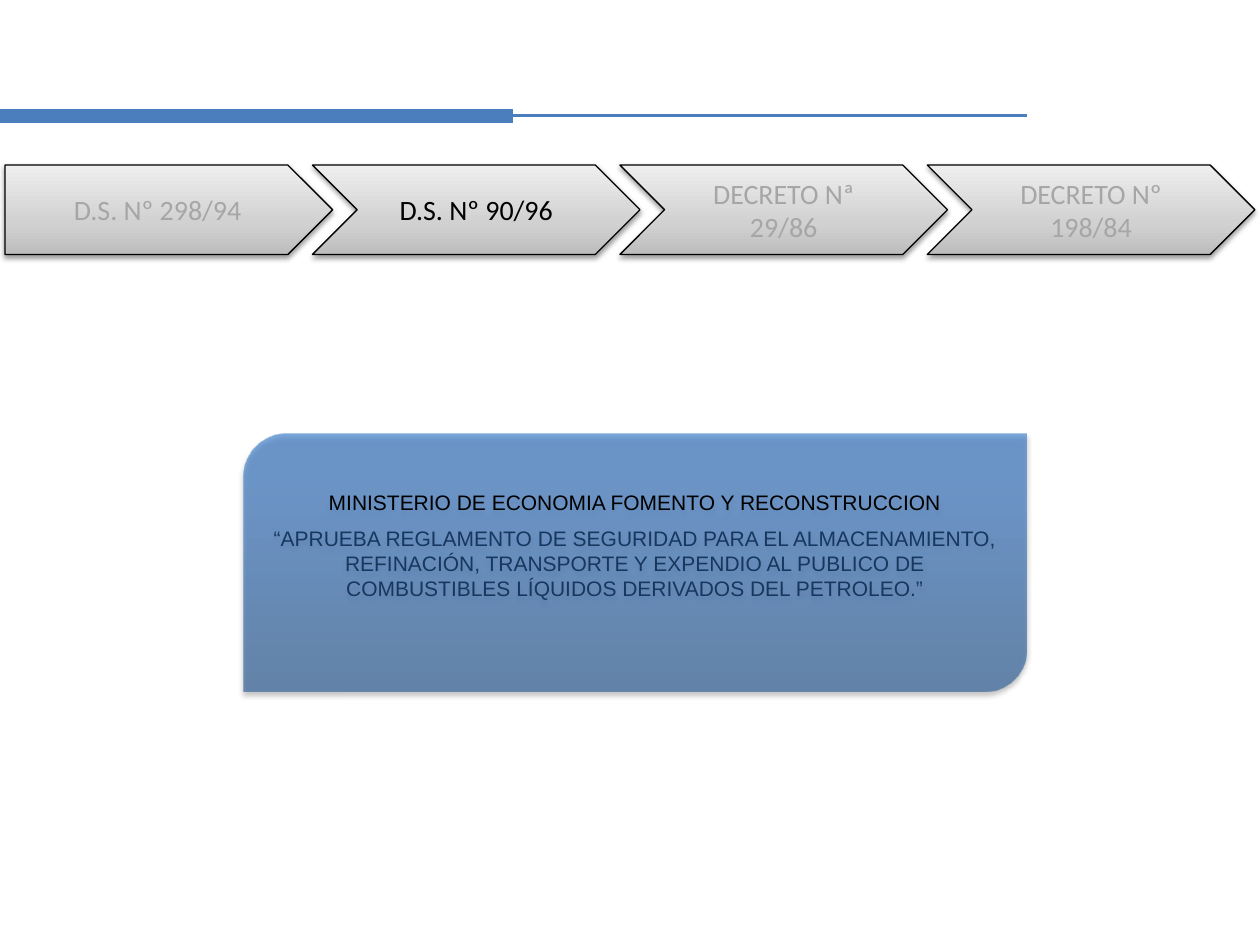
from dataclasses import dataclass

from lxml.etree import SubElement
from pptx import Presentation
from pptx.dml.color import RGBColor
from pptx.enum.shapes import MSO_CONNECTOR, MSO_SHAPE
from pptx.enum.text import MSO_ANCHOR, PP_ALIGN
from pptx.oxml.ns import qn
from pptx.util import Inches, Pt


@dataclass(frozen=True)
class Theme:
    rule: str = "4B7EBC"
    outline: str = "000000"
    active: str = "000000"
    muted: str = "A6A6A6"
    quote: str = "17375E"
    step_stops: tuple = ((0, "BDBDBD"), (35, "D1D1D1"), (100, "EEEEEE"))
    panel_stops: tuple = ((0, "2F5F99"), (80, "3D7CC7"), (100, "3A7CCB"))
    panel_opacity: int = 65
    step_font: str = "Calibri"
    step_size: int = 16
    panel_font: str = "Arial"
    panel_size: int = 12


THEME = Theme()
STEPS = ["D.S. Nº 298/94", "D.S. Nº 90/96", "DECRETO Nª 29/86", "DECRETO Nº 198/84"]
ACTIVE_STEP = 1
MINISTRY = "MINISTERIO DE ECONOMIA FOMENTO Y RECONSTRUCCION"
REGULATION = (
    "“APRUEBA REGLAMENTO DE SEGURIDAD PARA EL ALMACENAMIENTO, REFINACIÓN, "
    "TRANSPORTE Y EXPENDIO AL PUBLICO DE COMBUSTIBLES LÍQUIDOS DERIVADOS DEL PETROLEO.”"
)


def add_color(parent, color, opacity):
    clr = SubElement(parent, qn("a:srgbClr"), val=color)
    if opacity < 100:
        SubElement(clr, qn("a:alpha"), val=str(opacity * 1000))


def set_gradient(s, stops, opacity=100):
    """Fill from bottom to top with (percent, colour) stops."""
    s.fill.gradient()
    s.fill.gradient_angle = 90
    stop_list = s._element.spPr.find(qn("a:gradFill")).find(qn("a:gsLst"))
    for old in list(stop_list):
        stop_list.remove(old)
    for position, color in stops:
        stop = SubElement(stop_list, qn("a:gs"), pos=str(position * 1000))
        add_color(stop, color, opacity)


def set_shadow(s, opacity, distance):
    s.shadow.inherit = False
    effects = s._element.spPr.find(qn("a:effectLst"))
    shadow = SubElement(
        effects, qn("a:outerShdw"), blurRad=str(Pt(3.1)), dist=str(Pt(distance)),
        dir="5400000", rotWithShape="0",
    )
    add_color(shadow, "000000", opacity)


def set_text(s, lines, font, size, inset, space_before=0):
    """Write centred paragraphs from (text, colour) pairs."""
    tf = s.text_frame
    tf.word_wrap = True
    tf.vertical_anchor = MSO_ANCHOR.MIDDLE
    tf.margin_left = tf.margin_right = Inches(inset)
    for i, (text, color) in enumerate(lines):
        p = tf.add_paragraph() if i else tf.paragraphs[0]
        p.text = text
        p.alignment = PP_ALIGN.CENTER
        p.space_before = Pt(space_before)
        p.font.name = font
        p.font.size = Pt(size)
        p.font.color.rgb = RGBColor.from_string(color)


def add_rule(slide, length, width):
    y = Inches(0.92)
    rule = slide.shapes.add_connector(MSO_CONNECTOR.STRAIGHT, 0, y, Inches(length), y)
    rule.line.color.rgb = RGBColor.from_string(THEME.rule)
    rule.line.width = Pt(width)
    SubElement(rule._element.spPr, qn("a:effectLst"))


def add_step(slide, index, label):
    kind = MSO_SHAPE.CHEVRON if index else MSO_SHAPE.PENTAGON
    s = slide.shapes.add_shape(
        kind, Inches(0.04 + 2.44 * index), Inches(1.31), Inches(2.6), Inches(0.71)
    )
    set_gradient(s, THEME.step_stops)
    s.line.color.rgb = RGBColor.from_string(THEME.outline)
    s.line.width = Pt(0.75)
    set_shadow(s, 38, 1.6)
    color = THEME.active if index == ACTIVE_STEP else THEME.muted
    set_text(s, [(label, color)], THEME.step_font, THEME.step_size, 0.15)


def add_panel(slide, lines):
    s = slide.shapes.add_shape(
        MSO_SHAPE.ROUND_2_DIAG_RECTANGLE, Inches(1.93), Inches(3.44), Inches(6.22), Inches(2.05)
    )
    set_gradient(s, THEME.panel_stops, THEME.panel_opacity)
    s.line.fill.background()
    set_shadow(s, 35, 1.8)
    set_text(s, lines, THEME.panel_font, THEME.panel_size, 0.1, space_before=6)
    s.text_frame.margin_bottom = Inches(0.32)


def main():
    prs = Presentation()
    prs.slide_width, prs.slide_height = Inches(10), Inches(7.5)
    slide = prs.slides.add_slide(prs.slide_layouts[6])
    add_rule(slide, 8.15, 1.75)
    add_rule(slide, 4.07, 8)
    for index, label in enumerate(STEPS):
        add_step(slide, index, label)
    add_panel(slide, [(MINISTRY, THEME.active), (REGULATION, THEME.quote)])
    prs.save("out.pptx")


if __name__ == "__main__":
    main()
